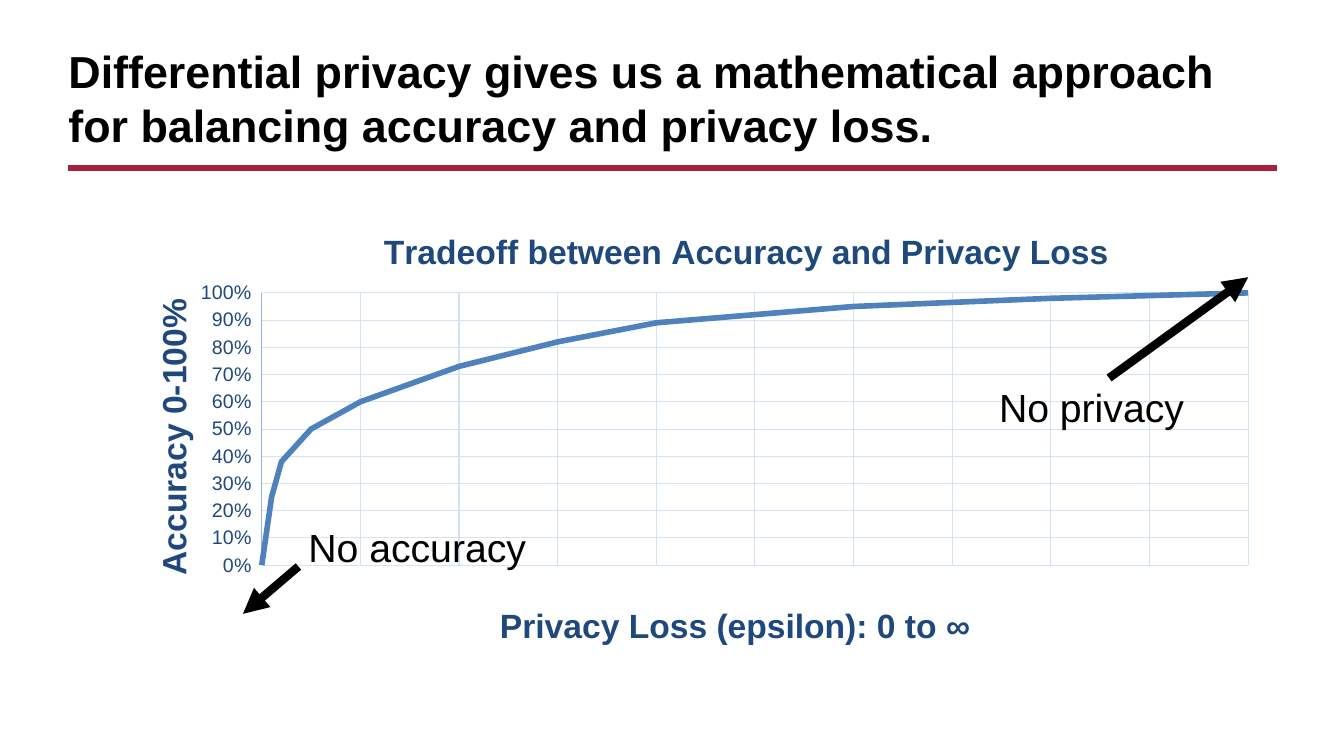
from lxml import etree
from pptx import Presentation
from pptx.chart.data import XyChartData
from pptx.dml.color import RGBColor
from pptx.enum.chart import XL_CHART_TYPE, XL_TICK_LABEL_POSITION, XL_TICK_MARK
from pptx.enum.shapes import MSO_CONNECTOR
from pptx.enum.text import MSO_ANCHOR, MSO_AUTO_SIZE
from pptx.oxml.ns import qn
from pptx.util import Inches, Pt

SCATTER = XL_CHART_TYPE.XY_SCATTER_SMOOTH_NO_MARKERS
LOW = XL_TICK_LABEL_POSITION.LOW
NO_TICK = XL_TICK_MARK.NONE
STRAIGHT = MSO_CONNECTOR.STRAIGHT
BOTTOM, TOP = MSO_ANCHOR.BOTTOM, MSO_ANCHOR.TOP
GROW, FIXED = MSO_AUTO_SIZE.SHAPE_TO_FIT_TEXT, MSO_AUTO_SIZE.NONE
COLORS = {"black": "000000", "rule": "A9203D", "navy": "1F497D",
          "grid": "D4E3F4", "axis": "8EB4E3", "curve": "4F81BD"}


def style(font, size, color, bold=False):
    for key, value in {"name": "Arial", "size": Pt(size), "bold": bold}.items():
        setattr(font, key, value)
    font.color.rgb = RGBColor.from_string(COLORS[color])


def place(node, index, **spots):
    """Fix a chart part at fractions of the chart's size."""
    for old in node.findall(qn("c:layout")):
        node.remove(old)
    layout = etree.Element(qn("c:layout"))
    manual = etree.SubElement(layout, qn("c:manualLayout"))
    if "w" in spots:
        etree.SubElement(manual, qn("c:layoutTarget")).set("val", "inner")
    for key in "xy":
        etree.SubElement(manual, qn(f"c:{key}Mode")).set("val", "edge")
    for key, value in spots.items():
        etree.SubElement(manual, qn(f"c:{key}")).set("val", str(value))
    node.insert(index, layout)


deck = Presentation()
deck.slide_width, deck.slide_height = Inches(13.33), Inches(7.5)
slide = deck.slides.add_slide(deck.slide_layouts[6])
shapes = slide.shapes

# Chart data
data = XyChartData(number_format="0%")
curve = data.add_series("Series 1")
for loss, gain in [(0, 0), (0.1, 0.25), (0.2, 0.38), (0.5, 0.5), (1, 0.6),
                   (2, 0.73), (3, 0.82), (4, 0.89), (6, 0.95), (8, 0.98), (10, 1)]:
    curve.add_data_point(loss, gain)
chart = shapes.add_chart(SCATTER, Inches(1.1), Inches(1.99),
                         Inches(11.51), Inches(4.58), data).chart
chart.has_legend = False
style(chart.font, 10, "black")
plot = chart.plots[0]
plot.vary_by_categories = False
line = plot.series[0]
line.smooth = True
line.format.line.width = Pt(4)
line.format.line.color.rgb = RGBColor.from_string(COLORS["curve"])

# Axes
across, up = chart.category_axis, chart.value_axis
for axis, top in [(across, 10), (up, 1)]:
    scale = {"minimum_scale": 0, "maximum_scale": top, "major_unit": top / 10,
             "has_major_gridlines": True, "major_tick_mark": NO_TICK,
             "minor_tick_mark": NO_TICK, "tick_label_position": LOW}
    for key, value in scale.items():
        setattr(axis, key, value)
    for edge, color in [(axis.major_gridlines.format.line, "grid"),
                        (axis.format.line, "axis")]:
        edge.width = Pt(0.75)
        edge.color.rgb = RGBColor.from_string(COLORS[color])
across.visible = False
up.tick_labels.number_format = "0%"
up.tick_labels.number_format_is_linked = False
style(up.tick_labels.font, 14, "navy")

# Chart and axis titles
for part, words, x, y in [
        (chart, "Tradeoff between Accuracy and Privacy Loss", 0.23, 0.05),
        (across, "Privacy Loss (epsilon): 0 to ∞", 0.33, 0.86),
        (up, "Accuracy 0-100%", 0.03, 0.2)]:
    title = part.chart_title if part is chart else part.axis_title
    title.text_frame.text = words
    style(title.text_frame.paragraphs[0].runs[0].font, 24, "navy", True)
    place(title._element, 1, x=x, y=y)
area = chart._chartSpace.find(".//" + qn("c:plotArea"))
place(area, 0, x=0.13, y=0.2, w=0.85, h=0.59)

# Heading and labels
for words, box, size, bold, anchor, fit in [
        ("Differential privacy gives us a mathematical approach "
         "for balancing accuracy and privacy loss.",
         (0.58, 0.3, 12.08, 1.25), 32, True, BOTTOM, FIXED),
        ("No privacy", (9.81, 3.75, 2.38, 0.57), 28, False, TOP, GROW),
        ("No accuracy", (2.96, 5.14, 2.38, 0.57), 28, False, TOP, GROW)]:
    frame = shapes.add_textbox(*map(Inches, box)).text_frame
    for key, value in {"word_wrap": True, "vertical_anchor": anchor,
                       "auto_size": fit, "text": words}.items():
        setattr(frame, key, value)
    style(frame.paragraphs[0].runs[0].font, size, "black", bold)

# Rule under the heading, and arrows
for ends, color, width, arrow in [
        ((0.67, 1.67, 12.67, 1.67), "rule", 4.5, False),
        ((2.96, 5.62, 2.41, 6.09), "black", 6, True),
        ((11, 3.75, 12.38, 2.75), "black", 6, True)]:
    link = shapes.add_connector(STRAIGHT, *map(Inches, ends))
    link.line.width = Pt(width)
    link.line.color.rgb = RGBColor.from_string(COLORS[color])
    if arrow:
        tail = etree.SubElement(link.line._get_or_add_ln(), qn("a:tailEnd"))
        tail.set("type", "triangle")
    etree.SubElement(link._element.spPr, qn("a:effectLst"))

deck.save("out.pptx")
